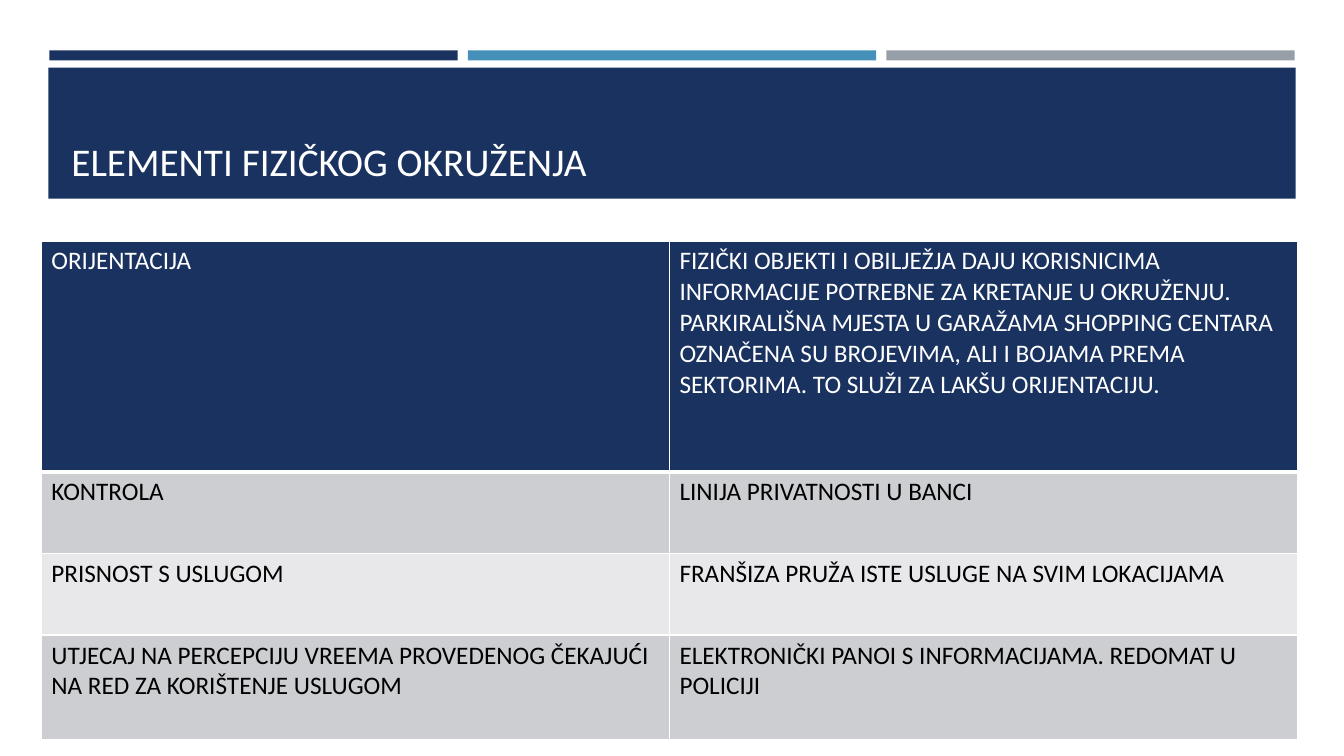
from lxml.etree import SubElement
from pptx import Presentation
from pptx.dml.color import RGBColor
from pptx.enum.shapes import MSO_SHAPE
from pptx.enum.text import MSO_ANCHOR
from pptx.oxml.ns import qn
from pptx.util import Inches, Pt

COLORS = {"navy": "1A3260", "blue": "4590B8", "gray": "969FA7", "white": "FFFFFF",
          "black": "000000", "dark": "CDCED2", "light": "E8E8EA"}
TITLE = "ELEMENTI FIZIČKOG OKRUŽENJA"
ROWS = [
    (2.29, "navy", "white", ["ORIJENTACIJA"], [
        "FIZIČKI OBJEKTI I OBILJEŽJA DAJU KORISNICIMA INFORMACIJE POTREBNE ZA KRETANJE U OKRUŽENJU.",
        "PARKIRALIŠNA MJESTA U GARAŽAMA SHOPPING CENTARA OZNAČENA SU BROJEVIMA, ALI I BOJAMA "
        "PREMA SEKTORIMA. TO SLUŽI ZA LAKŠU ORIJENTACIJU."]),
    (0.81, "dark", "black", ["KONTROLA"], ["LINIJA PRIVATNOSTI U BANCI"]),
    (0.81, "light", "black", ["PRISNOST S USLUGOM"],
     ["FRANŠIZA PRUŽA ISTE USLUGE NA SVIM LOKACIJAMA"]),
    (1.04, "dark", "black",
     ["UTJECAJ NA PERCEPCIJU VREEMA PROVEDENOG ČEKAJUĆI NA RED ZA KORIŠTENJE USLUGOM"],
     ["ELEKTRONIČKI PANOI S INFORMACIJAMA. REDOMAT U POLICIJI"]),
]
STRIPES = ["navy", "blue", "gray"]
LEFT, STRIPE, PITCH = 0.49, 4.05, 4.15
COLUMN = 6.23


def paint(fill, color):
    fill.solid()
    fill.fore_color.rgb = RGBColor.from_string(COLORS[color])


def add_bar(slide, color, *box):
    bar = slide.shapes.add_shape(MSO_SHAPE.RECTANGLE, *map(Inches, box))
    bar.shadow.inherit = False
    bar.line.fill.background()
    paint(bar.fill, color)


def write(frame, lines, size, color):
    frame.word_wrap = True
    for i, line in enumerate(lines):
        para = frame.paragraphs[0] if i == 0 else frame.add_paragraph()
        run = para.add_run()
        run.text = line
        for name, value in {"name": "Calibri", "size": Pt(size), "bold": False}.items():
            setattr(run.font, name, value)
        run.font.color.rgb = RGBColor.from_string(COLORS[color])


def edge(cell, widths):
    """Draw white cell borders; widths maps L, R, T, B to points."""
    props = cell._tc.get_or_add_tcPr()
    for side, width in widths.items():
        line = SubElement(props, qn(f"a:ln{side}"), w=str(Pt(width)))
        fill = SubElement(line, qn("a:solidFill"))
        SubElement(fill, qn("a:srgbClr"), val=COLORS["white"])


def add_grid(slide):
    height = sum(row[0] for row in ROWS)
    box = map(Inches, (0.41, 2.39, 2 * COLUMN, height))
    table = slide.shapes.add_table(len(ROWS), 2, *box).table
    for column in table.columns:
        column.width = Inches(COLUMN)
    for r, (height, back, ink, *texts) in enumerate(ROWS):
        table.rows[r].height = Inches(height)
        for c, lines in enumerate(texts):
            cell = table.cell(r, c)
            edge(cell, {"L": 1, "R": 1, "T": 3 if r == 1 else 1, "B": 3 if r == 0 else 1})
            paint(cell.fill, back)
            write(cell.text_frame, lines, 18, ink)


def main():
    deck = Presentation()
    deck.slide_width, deck.slide_height = Inches(13.33), Inches(7.5)
    slide = deck.slides.add_slide(deck.slide_layouts[6])
    for i, color in enumerate(STRIPES):
        add_bar(slide, color, LEFT + i * PITCH, 0.5, STRIPE, 0.1)
    add_bar(slide, "navy", 0.48, 0.67, 12.37, 1.3)
    title = slide.shapes.add_textbox(*map(Inches, (0.61, 0.77, 12.09, 1.11)))
    title.text_frame.vertical_anchor = MSO_ANCHOR.BOTTOM
    write(title.text_frame, [TITLE], 28, "white")
    add_grid(slide)
    deck.save("out.pptx")


if __name__ == "__main__":
    main()
